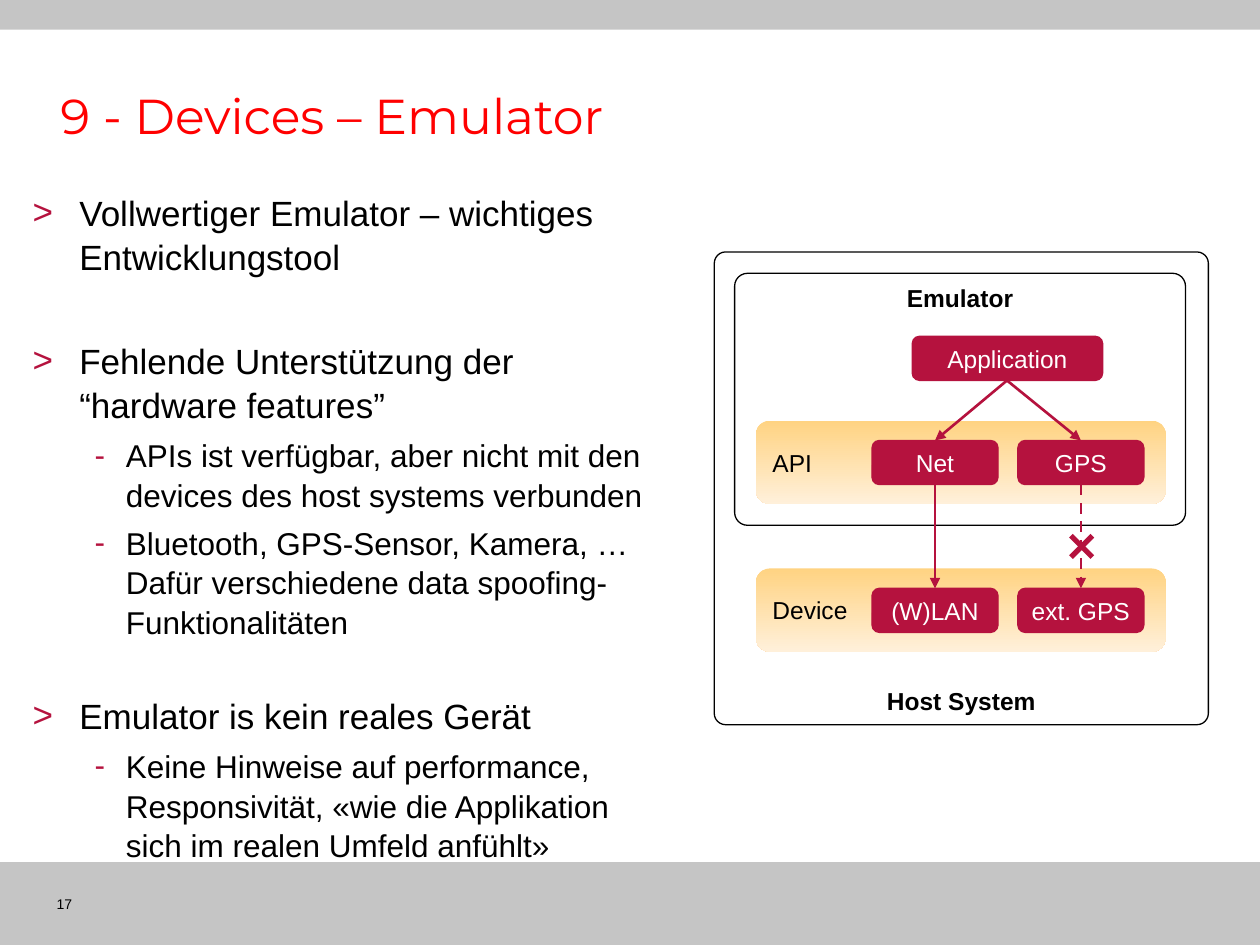
"""Build the slide on the emulator and its link to the host devices."""
from lxml.etree import SubElement
from pptx import Presentation
from pptx.dml.color import RGBColor as Rgb
from pptx.enum.dml import MSO_LINE_DASH_STYLE as Dash
from pptx.enum.shapes import MSO_CONNECTOR_TYPE as Link, MSO_AUTO_SHAPE_TYPE as Form
from pptx.enum.text import MSO_VERTICAL_ANCHOR as Anchor, PP_PARAGRAPH_ALIGNMENT as Align
from pptx.oxml.ns import qn
from pptx.util import Cm, Pt

COLORS = {"bar": "C5C5C5", "crimson": "B5123E", "title": "FF0000", "text": "000000",
          "white": "FFFFFF", "amber": "FFD382", "cream": "FFF0DA"}
NO_MARGINS = dict.fromkeys(("margin_left", "margin_top", "margin_right", "margin_bottom"), 0)
LEVELS = {
    1: {"bullet": ">", "size": 20, "indent": (0.96, -0.94), "after": 5},
    2: {"bullet": "-", "size": 18, "indent": (1.9, -0.63), "after": 4.5},
}
BULLETS = [
    (1, 0, "Vollwertiger Emulator – wichtiges Entwicklungstool"),
    (1, 29.5, "Fehlende Unterstützung der “hardware features”"),
    (2, 0, "APIs ist verfügbar, aber nicht mit den devices des host systems verbunden"),
    (2, 0, "Bluetooth, GPS-Sensor, Kamera, … Dafür verschiedene data spoofing-Funktionalitäten"),
    (1, 25, "Emulator is kein reales Gerät"),
    (2, 0, "Keine Hinweise auf performance, Responsivität, "
           "«wie die Applikation sich im realen Umfeld anfühlt»"),
]
LAYERS = [("Device", 11.46, ("(W)LAN", "ext. GPS")), ("API", 8.48, ("Net", "GPS"))]
CHIP_LEFTS = (17.58, 20.52)
CHIP_WIDTH, CHIP_HEIGHT, CHIP_INSET = 2.54, 0.89, 0.4


def color(name):
    """Return the named colour."""
    return Rgb.from_string(COLORS[name])


def apply_format(target, values):
    """Set every format value on the target."""
    for name, value in values.items():
        setattr(target, name, value)


def write(para, text, ink="text", **values):
    """Add one formatted span to a paragraph."""
    span = para.add_run()
    span.text = text
    span.font.color.rgb = color(ink)
    apply_format(span.font, {"name": "Arial", "size": Pt(14), **values})


def add_text(page, area, text, anchor=Anchor.TOP, **values):
    """Add a wrapped text box with one line of text."""
    box = page.shapes.add_textbox(*map(Cm, area))
    apply_format(box.text_frame, {"word_wrap": True, "vertical_anchor": anchor})
    write(box.text_frame.paragraphs[0], text, **values)


def add_block(page, area, fill=None, line=None, corner=None):
    """Add a plain or rounded rectangle."""
    form = Form.RECTANGLE if corner is None else Form.ROUNDED_RECTANGLE
    block = page.shapes.add_shape(form, *map(Cm, area))
    block.shadow.inherit = False
    if corner is not None:
        block.adjustments[0] = corner
    if fill:
        block.fill.solid()
        block.fill.fore_color.rgb = color(fill)
    else:
        block.fill.background()
    if line:
        block.line.color.rgb = color(line)
        block.line.width = Pt(0.75)
    else:
        block.line.fill.background()
    return block


def label(block, text, anchor=Anchor.MIDDLE, align=Align.CENTER, **values):
    """Write a label into a block."""
    frame = block.text_frame
    apply_format(frame, {"word_wrap": align == Align.LEFT, "vertical_anchor": anchor})
    frame.paragraphs[0].alignment = align
    write(frame.paragraphs[0], text, **values)


def add_layer(page, text, top):
    """Add a labelled gradient band."""
    band = add_block(page, (15.24, top, 8.26, 1.68), corner=0.167)
    band.fill.gradient()
    band.fill.gradient_angle = 270
    for stop, name, position in zip(band.fill.gradient_stops, ("amber", "cream"), (0, 1)):
        stop.color.rgb = color(name)
        stop.position = position
    label(band, text, align=Align.LEFT)


def add_chip(page, text, left, top, width=CHIP_WIDTH):
    """Add a crimson component box."""
    chip = add_block(page, (left, top, width, CHIP_HEIGHT), "crimson", "crimson", 0.167)
    label(chip, text, ink="white")


def add_frame(page, area, corner, text, anchor):
    """Add an outlined system frame with a bold caption."""
    frame = add_block(page, area, line="text", corner=corner)
    label(frame, text, anchor, bold=True)


def add_line(page, start, end, width=1.5, arrow=True, dash=None):
    """Add a crimson line, with an arrowhead if wanted."""
    link = page.shapes.add_connector(Link.STRAIGHT, *map(Cm, start + end))
    link.line.color.rgb = color("crimson")
    apply_format(link.line, {"width": Pt(width), "dash_style": dash})
    if arrow:
        SubElement(link.line._get_or_add_ln(), qn("a:tailEnd"), type="triangle")
    SubElement(link._element.spPr, qn("a:effectLst"))


def add_bullets(page):
    """Add the two-level bullet list."""
    box = page.shapes.add_textbox(Cm(0.64), Cm(3.81), Cm(12.9), Cm(13.97))
    frame = box.text_frame
    apply_format(frame, {"word_wrap": True, **NO_MARGINS})
    for index, (level, before, text) in enumerate(BULLETS):
        para = frame.add_paragraph() if index else frame.paragraphs[0]
        style = LEVELS[level]
        apply_format(para, {"level": level - 1, "line_spacing": 1.05,
                            "space_before": Pt(before), "space_after": Pt(style["after"])})
        props = para._p.get_or_add_pPr()
        for name, value in zip(("marL", "indent"), style["indent"]):
            props.set(name, str(Cm(value)))
        tint = SubElement(props, qn("a:buClr"))
        SubElement(tint, qn("a:srgbClr"), val=COLORS["crimson"])
        SubElement(props, qn("a:buFont"), typeface="Arial")
        SubElement(props, qn("a:buChar"), char=style["bullet"])
        write(para, text, size=Pt(style["size"]))


def add_diagram(page):
    """Add the layers, frames, components and links."""
    for name, top, _ in LAYERS:
        add_layer(page, name, top)
    add_frame(page, (14.81, 5.51, 9.09, 5.08), 0.051, "Emulator", Anchor.TOP)
    add_frame(page, (14.4, 5.08, 9.96, 9.53), 0.024, "Host System", Anchor.BOTTOM)
    for _, top, names in LAYERS:
        for name, left in zip(names, CHIP_LEFTS):
            add_chip(page, name, left, top + CHIP_INSET)
    add_chip(page, "Application", 18.39, 6.78, 3.84)

    device_top, api_top = (top + CHIP_INSET for _, top, _ in LAYERS)
    for left, dash in zip(CHIP_LEFTS, (None, Dash.DASH)):
        center = left + CHIP_WIDTH / 2
        add_line(page, (20.3, 6.78 + CHIP_HEIGHT), (center, api_top))
        add_line(page, (center, api_top + CHIP_HEIGHT), (center, device_top), dash=dash)
    for start, end in ((21.59, 22.02), (22.02, 21.59)):
        add_line(page, (start, 11.23), (end, 10.8), width=3, arrow=False)


def main():
    """Build and save the deck."""
    deck = Presentation()
    deck.slide_width, deck.slide_height = Cm(25.4), Cm(19.05)
    page = deck.slides.add_slide(deck.slide_layouts[6])
    for top, height in ((0, 0.6), (17.38, 1.67)):
        add_block(page, (0, top, 25.4, height), "bar")
    add_text(page, (0.97, 1.27, 23.6, 2.11), "9 - Devices – Emulator", Anchor.MIDDLE,
             ink="title", name="Montserrat", size=Pt(28))
    add_diagram(page)
    add_bullets(page)
    add_text(page, (0.89, 17.93, 1.45, 0.66), "17", size=Pt(8))
    deck.save("out.pptx")


if __name__ == "__main__":
    main()
